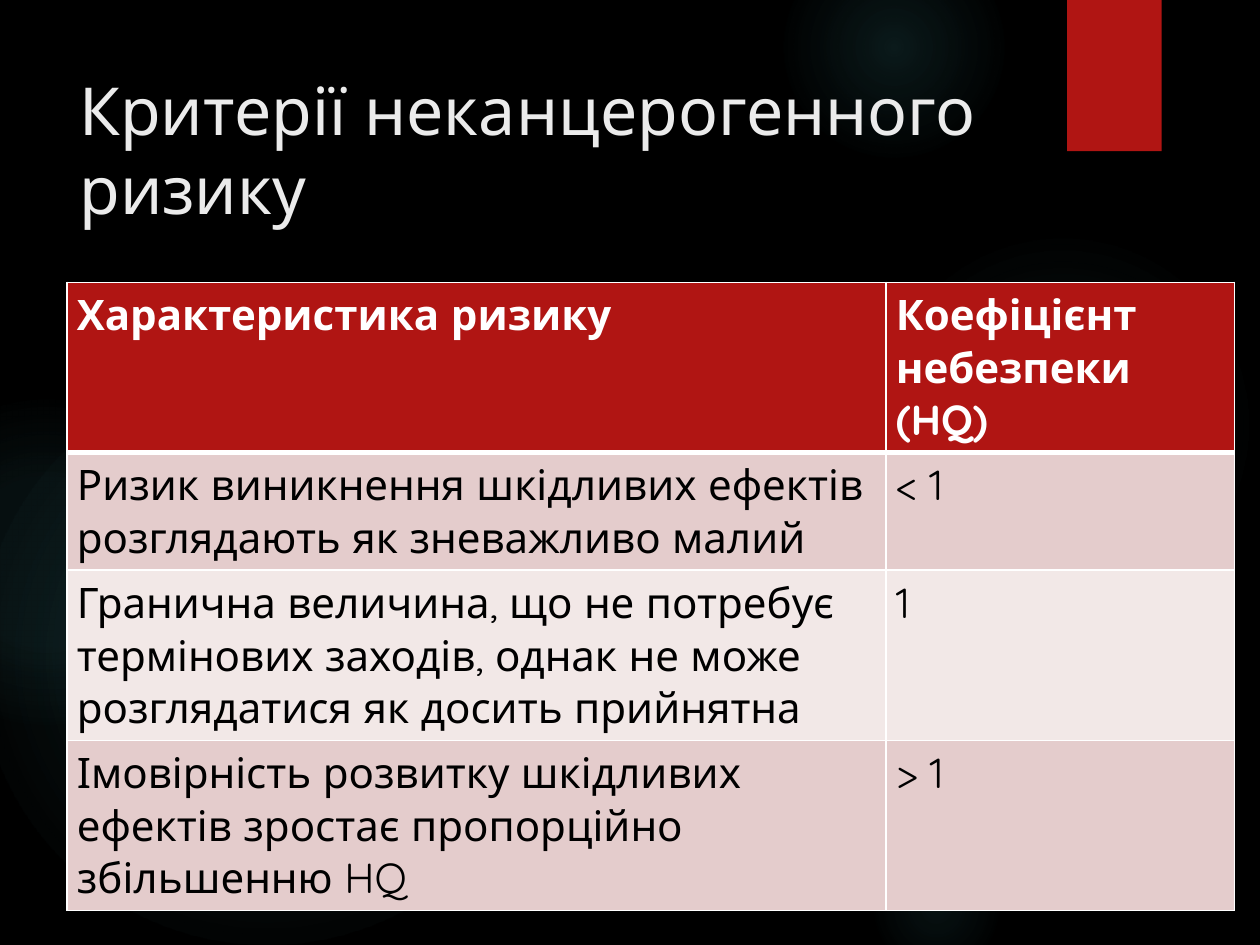
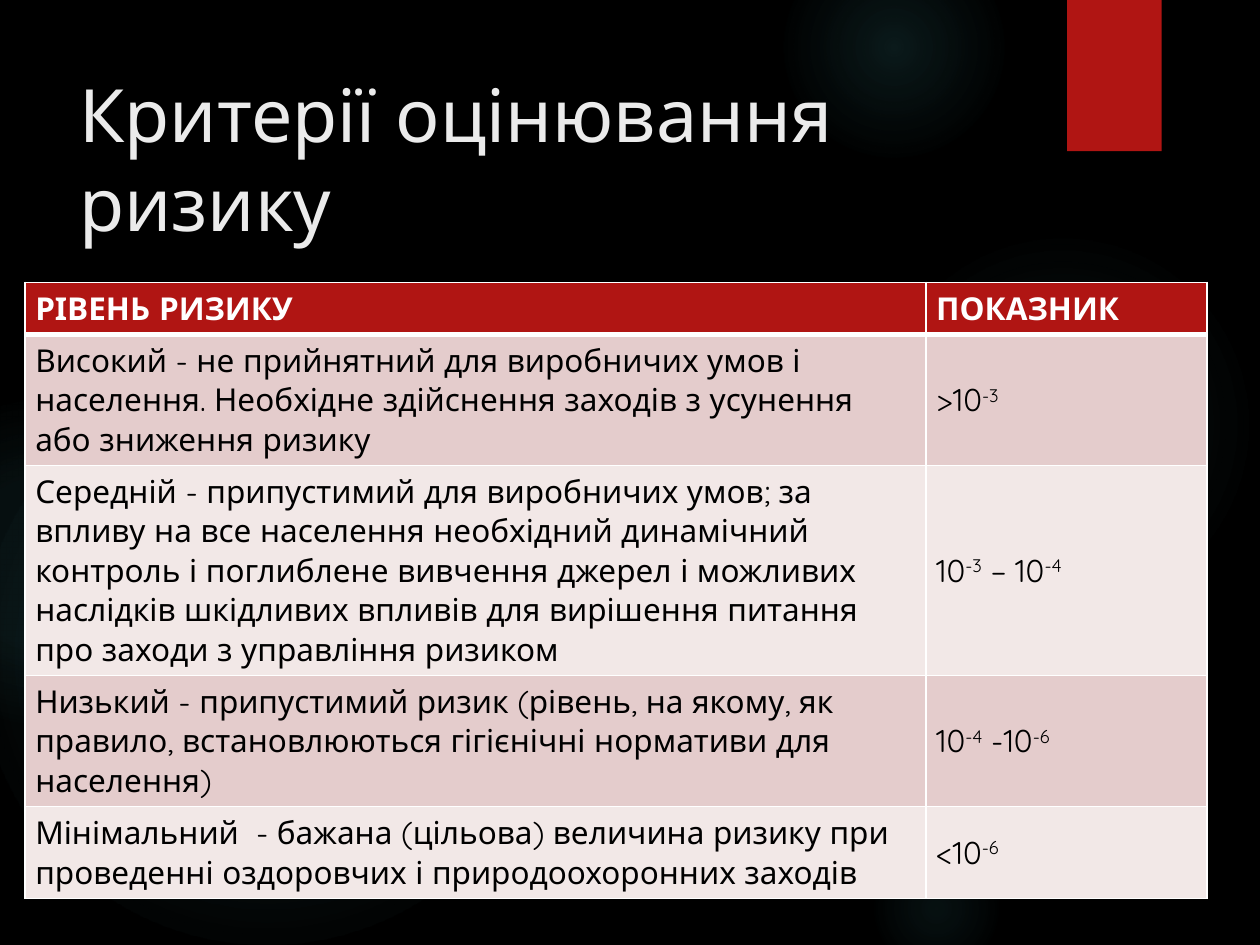
"""Build two slides with risk assessment criteria tables."""
from lxml import etree
from pptx import Presentation
from pptx.dml.color import RGBColor
from pptx.enum.shapes import MSO_SHAPE
from pptx.enum.text import MSO_ANCHOR, MSO_AUTO_SIZE, PP_ALIGN
from pptx.oxml import parse_xml
from pptx.oxml.ns import qn
from pptx.util import Inches, Pt

BLACK = RGBColor(0x00, 0x00, 0x00)
WHITE = RGBColor(0xFF, 0xFF, 0xFF)
RED = RGBColor(0xB0, 0x15, 0x13)
GLOW = RGBColor(0x50, 0xB9, 0xC1)
TITLE = RGBColor(0xEB, 0xEB, 0xEB)
BANDS = (RGBColor(0xE4, 0xCC, 0xCC), RGBColor(0xF2, 0xE8, 0xE7))
FONT = "Quicksand"
NS = 'xmlns:a="http://schemas.openxmlformats.org/drawingml/2006/main"'

# left, top, diameter, then (position, opacity) stops in percent
GLOWS = [
    (6.89, 1.83, 3.08, [(0, 7), (36, 6), (69, 0)]),
    (6.22, -0.5, 1.75, [(0, 14), (36, 7), (73, 0)]),
    (6.89, 6.67, 1.08, [(0, 9), (36, 5), (66, 0)]),
    (-0.17, 2.92, 4.58, [(0, 11), (36, 10), (75, 0)]),
    (-0.92, 3.17, 2.58, [(0, 8), (36, 8), (72, 0)]),
]

# text between carets is superscript
SLIDES = [
    {
        "title": "Критерії неканцерогенного ризику",
        "title_size": 37.8,
        "left": 0.53,
        "cols": [6.5, 2.77],
        "heights": [1.34, 0.93, 1.35, 1.35],
        "size": 24,
        "anchor": MSO_ANCHOR.TOP,
        "rows": [
            ("Характеристика ризику", "Коефіцієнт небезпеки (HQ)"),
            ("Ризик виникнення шкідливих ефектів розглядають як зневажливо малий", "< 1"),
            ("Гранична величина, що не потребує термінових заходів, однак не може "
             "розглядатися як досить прийнятна", "1"),
            ("Імовірність розвитку шкідливих ефектів зростає пропорційно збільшенню HQ", "> 1"),
        ],
    },
    {
        "title": "Критерії оцінювання ризику",
        "title_size": 42,
        "left": 0.2,
        "cols": [7.15, 2.23],
        "heights": [0.41, 1.04, 1.66, 1.04, 0.72],
        "size": 18,
        "anchor": MSO_ANCHOR.MIDDLE,
        "rows": [
            ("РІВЕНЬ РИЗИКУ", "ПОКАЗНИК"),
            ("Високий - не прийнятний для виробничих умов і населення. Необхідне "
             "здійснення заходів з усунення або зниження ризику", ">10^-3^"),
            ("Середній - припустимий для виробничих умов; за впливу на все населення "
             "необхідний динамічний контроль і поглиблене вивчення джерел і можливих "
             "наслідків шкідливих впливів для вирішення питання про заходи з "
             "управління ризиком", "10^-3^ – 10^-4^"),
            ("Низький - припустимий ризик (рівень, на якому, як правило, "
             "встановлюються гігієнічні нормативи для населення)", "10^-4^ -10^-6^"),
            ("Мінімальний  - бажана (цільова) величина ризику при проведенні "
             "оздоровчих і природоохоронних заходів", "<10^-6^"),
        ],
    },
]


def add_runs(p, text, size, color, bold=False):
    for i, part in enumerate(text.split("^")):
        if part:
            r = p.add_run()
            r.text = part
            f = r.font
            f.name, f.size, f.bold = FONT, Pt(size), bold
            f.color.rgb = color
            if i % 2:
                r._r.get_or_add_rPr().set("baseline", "30000")


def add_plain(s, kind, left, top, width, height, color):
    sp = s.shapes.add_shape(kind, Inches(left), Inches(top), Inches(width), Inches(height))
    sp.shadow.inherit = False
    sp.fill.solid()
    sp.fill.fore_color.rgb = color
    sp.line.fill.background()
    return sp


def add_glow(s, left, top, size, stops):
    sp = add_plain(s, MSO_SHAPE.OVAL, left, top, size, size, GLOW)
    gs = "".join(
        f'<a:gs pos="{pos * 1000}"><a:srgbClr val="{GLOW}">'
        f'<a:alpha val="{alpha * 1000}"/></a:srgbClr></a:gs>' for pos, alpha in stops)
    spPr = sp._element.spPr
    spPr.replace(spPr.find(qn("a:solidFill")), parse_xml(
        f'<a:gradFill {NS}><a:gsLst>{gs}</a:gsLst><a:path path="circle">'
        '<a:fillToRect l="50000" t="50000" r="50000" b="50000"/></a:path></a:gradFill>'))
    return sp


def add_flag(s):
    sp = add_plain(s, MSO_SHAPE.RECTANGLE, 8.47, 0, 0.75, 1.2, RED)
    sp._element.spPr.find(qn("a:effectLst")).append(parse_xml(
        f'<a:outerShdw {NS} blurRad="{Pt(3)}" dist="{Pt(2)}" dir="5400000">'
        '<a:srgbClr val="000000"><a:alpha val="45000"/></a:srgbClr></a:outerShdw>'))
    return sp


def decorate_layout(s):
    layout = s.slide_layout
    layout.background.fill.solid()
    layout.background.fill.fore_color.rgb = BLACK
    backdrop = [add_glow(s, *glow) for glow in GLOWS] + [add_flag(s)]
    for i, sp in enumerate(backdrop):
        sp._element.nvSpPr.cNvPr.set("id", str(100 + i))
        layout.shapes._spTree.insert(2 + i, sp._element)


def add_title(s, text, size):
    sp = s.shapes.title
    sp.left, sp.top, sp.width, sp.height = map(Inches, (0.53, 0.5, 7.72, 1.53))
    tf = sp.text_frame
    tf.word_wrap = True
    tf.auto_size = MSO_AUTO_SIZE.NONE
    tf.vertical_anchor = MSO_ANCHOR.TOP
    p = tf.paragraphs[0]
    p.alignment = PP_ALIGN.LEFT
    add_runs(p, text, size, TITLE)


def set_borders(cell, row):
    tcPr = cell._tc.get_or_add_tcPr()
    widths = {"L": 1, "R": 1, "T": 3 if row == 1 else 1, "B": 3 if row == 0 else 1}
    for i, (side, width) in enumerate(widths.items()):
        ln = etree.Element(qn(f"a:ln{side}"), w=str(Pt(width)))
        fill = etree.SubElement(ln, qn("a:solidFill"))
        etree.SubElement(fill, qn("a:srgbClr"), val=str(WHITE))
        tcPr.insert(i, ln)


def add_criteria(s, spec):
    rows, cols, heights = spec["rows"], spec["cols"], spec["heights"]
    table = s.shapes.add_table(
        len(rows), len(cols), Inches(spec["left"]), Inches(2.24),
        Inches(sum(cols)), Inches(sum(heights))).table
    for col, width in zip(table.columns, cols):
        col.width = Inches(width)
    for i, texts in enumerate(rows):
        table.rows[i].height = Inches(heights[i])
        head = i == 0
        for j, text in enumerate(texts):
            cell = table.cell(i, j)
            cell.margin_left = cell.margin_right = Inches(0.08)
            cell.margin_top = cell.margin_bottom = Inches(0.05)
            cell.vertical_anchor = spec["anchor"]
            cell.fill.solid()
            cell.fill.fore_color.rgb = RED if head else BANDS[(i - 1) % 2]
            set_borders(cell, i)
            add_runs(cell.text_frame.paragraphs[0], text, spec["size"],
                     WHITE if head else BLACK, head)


def main():
    prs = Presentation()
    prs.slide_width, prs.slide_height = Inches(10), Inches(7.5)
    for i, spec in enumerate(SLIDES):
        s = prs.slides.add_slide(prs.slide_layouts[5])
        if i == 0:
            decorate_layout(s)
        add_title(s, spec["title"], spec["title_size"])
        add_criteria(s, spec)
    prs.save("out.pptx")


if __name__ == "__main__":
    main()
